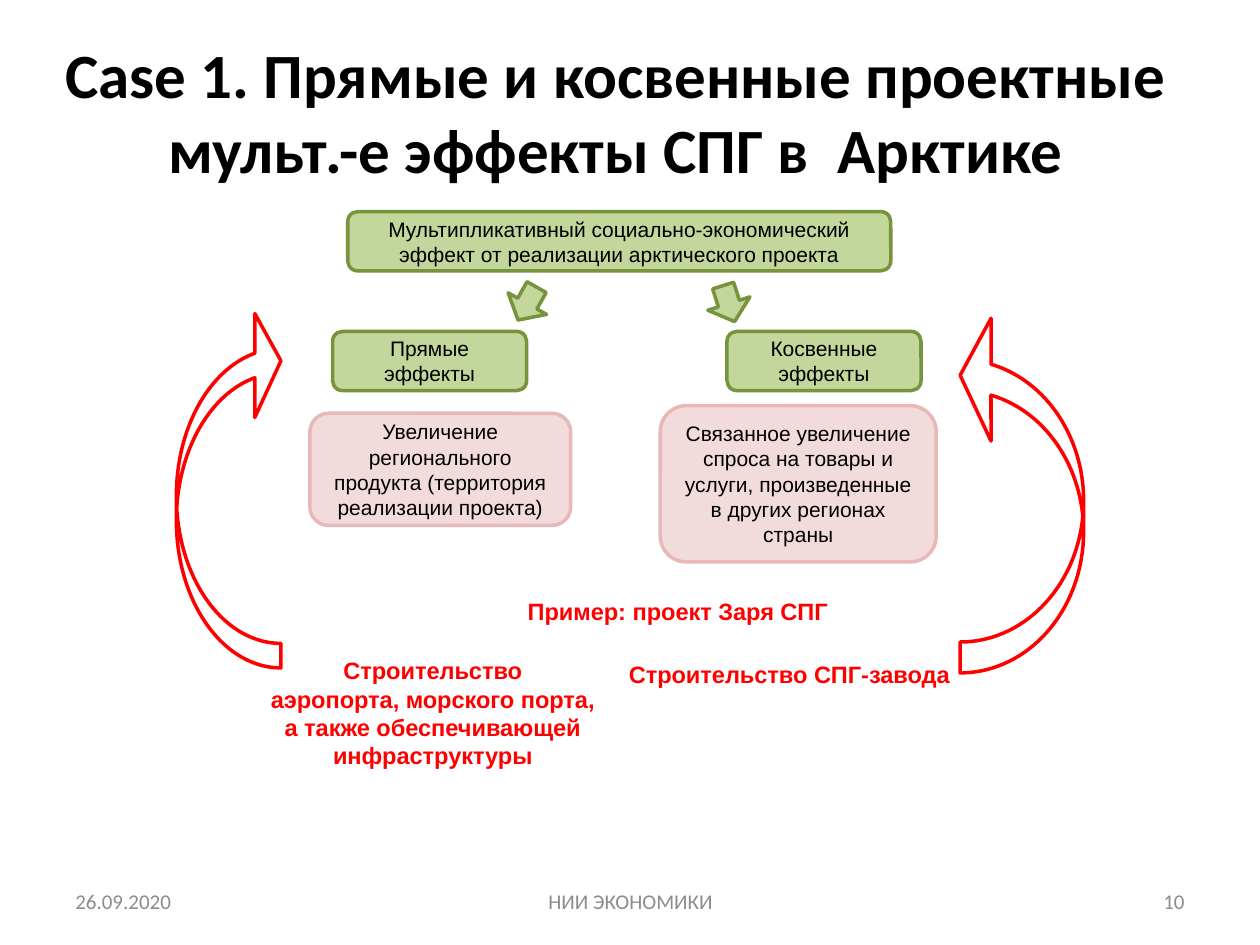
from dataclasses import dataclass

from pptx import Presentation
from pptx import util as u
from pptx.dml.color import RGBColor
from pptx.enum import shapes, text
from pptx.oxml.ns import qn


@dataclass(frozen=True)
class Theme:
    heading: str = "Calibri"
    body: str = "Arial"
    black: str = "000000"
    red: str = "FF0000"
    grey: str = "8C8C8C"
    green: tuple = ("C3D69B", "77933C")
    pink: tuple = ("F2DCDB", "E6B9B8")
    title_size: float = 36
    box_size: float = 12
    note_size: float = 13.5
    line: float = 2


T = Theme()
ALIGN, ANCHOR = text.PP_ALIGN, text.MSO_ANCHOR
SHAPE = shapes.MSO_SHAPE

# Places are left, top, width, height in percent of the slide.
TITLE = ("Case 1. Прямые и косвенные проектные мульт.-е эффекты СПГ в  Арктике",
         (0, 3.07, 97.7, 17.47))
BOXES = [
    ("Мультипликативный социально-экономический эффект от реализации арктического проекта",
     (27.6, 22.4, 43.1, 6.27), T.green),
    ("Прямые эффекты", (26.4, 35.07, 15.4, 6.27), T.green),
    ("Косвенные эффекты", (57.7, 35.07, 15.4, 6.27), T.green),
    ("Увеличение регионального продукта (территория реализации проекта)",
     (24.6, 43.73, 20.7, 11.87), T.pink),
    ("Связанное увеличение спроса на товары и услуги, произведенные в других регионах страны",
     (52.4, 42.93, 21.9, 16.53), T.pink),
]
DOWN_ARROWS = [((56.1, 30.13, 3.5, 4), 342.4), ((40.1, 30.13, 3.5, 4), 29.4)]
NOTES = [
    (["Пример: проект Заря СПГ"], (40.9, 62.53, 26.7, 4.4), ALIGN.LEFT),
    (["Строительство", "аэропорта, морского порта,", "а также обеспечивающей",
      "инфраструктуры"], (18.7, 68.8, 31.3, 13.47), ALIGN.CENTER),
    (["Строительство СПГ-завода"], (47, 69.2, 31.3, 4.4), ALIGN.CENTER),
]
LOOPS = [((76.2, 33.2, 9.8, 38), (0.25, 0.995, 0.25), False),
         ((14, 32.67, 8.3, 38), (0.234, 0.995, 0.25), True)]
FOOTER_TOP, FOOTER_HEIGHT = 92.67, 5.33
FOOTERS = [("НИИ ЭКОНОМИКИ", 34.2, 31.7, ALIGN.CENTER),
           ("10", 71.7, 23.3, ALIGN.RIGHT),
           ("26.09.2020", 5, 23.3, ALIGN.LEFT)]

prs = Presentation()
prs.slide_width, prs.slide_height = u.Inches(10), u.Inches(7.5)
s = prs.slides.add_slide(prs.slide_layouts[5])


def place(at):
    sides = (prs.slide_width, prs.slide_height) * 2
    return [round(side * share / 100) for side, share in zip(sides, at)]


def write(tf, lines, font, size, color, align, anchor, bold=False):
    tf.word_wrap = True
    tf.auto_size = text.MSO_AUTO_SIZE.NONE
    tf.vertical_anchor = anchor
    for i, line in enumerate(lines):
        p = tf.paragraphs[0] if i == 0 else tf.add_paragraph()
        p.text = line
        p.alignment = align
        p.font.name, p.font.size, p.font.bold = font, u.Pt(size), bold
        p.font.color.rgb = RGBColor.from_string(color)


def add_shape(kind, at, fill, line, rotation=0):
    sp = s.shapes.add_shape(kind, *place(at))
    sp.shadow.inherit = False
    sp.rotation = rotation
    if fill:
        sp.fill.solid()
        sp.fill.fore_color.rgb = RGBColor.from_string(fill)
    else:
        sp.fill.background()
    sp.line.color.rgb = RGBColor.from_string(line)
    sp.line.width = u.Pt(T.line)
    return sp


def add_text(lines, at, *style, **options):
    write(s.shapes.add_textbox(*place(at)).text_frame, lines, *style, **options)


title = s.shapes.title
title.left, title.top, title.width, title.height = place(TITLE[1])
write(title.text_frame, [TITLE[0]], T.heading, T.title_size, T.black,
      ALIGN.CENTER, ANCHOR.TOP, bold=True)

for label, at, colors in BOXES:
    sp = add_shape(SHAPE.ROUNDED_RECTANGLE, at, *colors)
    write(sp.text_frame, [label], T.body, T.box_size, T.black, ALIGN.CENTER, ANCHOR.MIDDLE)

for at, rotation in DOWN_ARROWS:
    add_shape(SHAPE.DOWN_ARROW, at, *T.green, rotation)

for lines, at, align in NOTES:
    add_text(lines, at, T.body, T.note_size, T.red, align, ANCHOR.TOP, bold=True)

for at, adjustments, flipped in LOOPS:
    sp = add_shape(SHAPE.CURVED_RIGHT_ARROW, at, None, T.red, 180)
    for i, value in enumerate(adjustments):
        sp.adjustments[i] = value
    if flipped:
        sp.element.spPr.find(qn("a:xfrm")).set("flipH", "1")

for label, left, width, align in FOOTERS:
    add_text([label], (left, FOOTER_TOP, width, FOOTER_HEIGHT),
             T.heading, T.box_size, T.grey, align, ANCHOR.MIDDLE)

prs.save("out.pptx")
